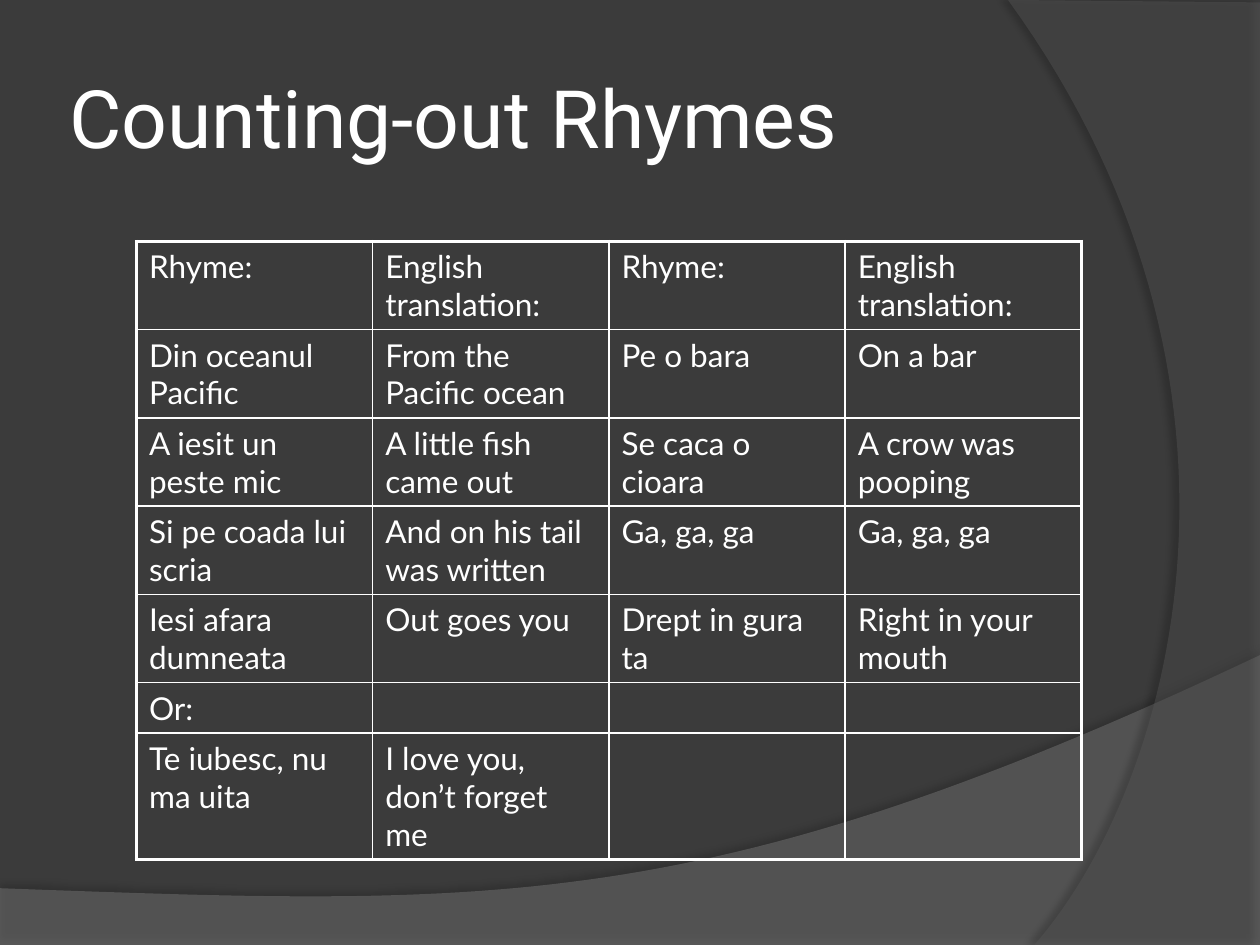
import lxml.etree
import pptx
import pptx.dml.color
import pptx.enum.text
import pptx.oxml.ns
import pptx.util

Pt = pptx.util.Pt
RGB = pptx.dml.color.RGBColor
WHITE = RGB(0xFF, 0xFF, 0xFF)
DARK = RGB(0x3B, 0x3B, 0x3B)
GREY = RGB(0x7C, 0x7C, 0x7C)
SLATE = RGB(0x59, 0x59, 0x59)
BLACK = RGB(0, 0, 0)

HEAD = {"name": "Roboto", "size": Pt(46)}
BODY = {"name": "Lato", "size": Pt(18)}
THICK, THIN = 2.25, 1
HEIGHTS = [50.4] * 5 + [28.8, 72]
RHYMES = [
    ["Rhyme:", "English translation:", "Rhyme:", "English translation:"],
    ["Din oceanul Pacific", "From the Pacific ocean", "Pe o bara", "On a bar"],
    ["A iesit un peste mic", "A little fish came out", "Se caca o cioara", "A crow was pooping"],
    ["Si pe coada lui scria", "And on his tail was written", "Ga, ga, ga", "Ga, ga, ga"],
    ["Iesi afara dumneata", "Out goes you", "Drept in gura ta", "Right in your mouth"],
    ["Or:", "", "", ""],
    ["Te iubesc, nu ma uita", "I love you, don’t forget me", "", ""],
]


def add(root, tag, **attrs):
    """Append a DrawingML child element and return it."""
    node = lxml.etree.SubElement(root, pptx.oxml.ns.qn("a:" + tag))
    for key, val in attrs.items():
        node.set(key, str(val))
    return node


def tint(root, color, alpha=100):
    """Append a colour with the given opacity in percent."""
    node = add(root, "srgbClr", val=color)
    add(node, "alpha", val=alpha * 1000)


def style(frame, text, form):
    """Write white text with the given font values."""
    para = frame.paragraphs[0]
    para.text = text
    for key, val in form.items():
        setattr(para.font, key, val)
    para.font.color.rgb = WHITE


def curve(ends, steps=60):
    """Return points along a cubic Bezier curve."""
    pts = []
    for step in range(1, steps + 1):
        t = step / steps
        mix = ((1 - t) ** 3, 3 * t * (1 - t) ** 2, 3 * t * t * (1 - t), t ** 3)
        pts.append(tuple(sum(m * end[axis] for m, end in zip(mix, ends)) for axis in (0, 1)))
    return pts


def sweep(slide, box, edge, ends, color, alpha, shade):
    """Draw a translucent band with straight edges and one curved side."""
    left, top = box
    pts = [(Pt(x), Pt(y)) for x, y in edge + curve([edge[-1]] + ends)]
    pen = slide.shapes.build_freeform(*pts[0], scale=1.0)
    pen.add_line_segments(pts[1:], close=True)
    band = pen.convert_to_shape(Pt(left), Pt(top))
    band.line.fill.background()
    band.fill.solid()
    band.fill.fore_color.rgb = color
    props = band.element.spPr
    fill = props.find(pptx.oxml.ns.qn("a:solidFill"))
    add(fill[0], "alpha", val=alpha * 1000)
    depth, dist, angle = shade
    glow = add(add(props, "effectLst"), "outerShdw", blurRad=Pt(4), dist=Pt(dist),
               dir=angle * 60000, algn="ctr", rotWithShape=0)
    tint(glow, BLACK, depth)


def title(slide, box, text):
    """Place the heading in the middle of its box."""
    frame = slide.shapes.add_textbox(*map(Pt, box)).text_frame
    form = {"word_wrap": True, "vertical_anchor": pptx.enum.text.MSO_ANCHOR.MIDDLE}
    form.update({"margin_" + side: Pt(3.6) for side in ("left", "top", "right", "bottom")})
    for key, val in form.items():
        setattr(frame, key, val)
    style(frame, text, HEAD)


def border(cell, sides):
    """Rule the four sides of a cell in white."""
    props = cell._tc.get_or_add_tcPr()
    for spot, (side, width) in enumerate(sides.items()):
        line = add(props, "ln" + side, w=Pt(width))
        tint(add(line, "solidFill"), WHITE)
        props.insert(spot, line)


def grid(slide, box, rows, heights):
    """Place the rhyme table with a thick frame and thin inner rules."""
    high, wide = len(rows), len(rows[0])
    table = slide.shapes.add_table(high, wide, *map(Pt, box)).table
    table.first_row = table.horz_banding = False
    for col in table.columns:
        col.width = Pt(box[2] / wide)
    for r, row in enumerate(rows):
        table.rows[r].height = Pt(heights[r])
        for c, text in enumerate(row):
            cell = table.cell(r, c)
            cell.fill.background()
            style(cell.text_frame, text, BODY)
            outer = {"L": c == 0, "R": c == wide - 1, "T": r == 0, "B": r == high - 1}
            border(cell, {side: THICK if out else THIN for side, out in outer.items()})


def main():
    """Build and save the slide."""
    deck = pptx.Presentation()
    deck.slide_width, deck.slide_height = Pt(720), Pt(540)
    slide = deck.slides.add_slide(deck.slide_layouts[6])
    slide.background.fill.solid()
    slide.background.fill.fore_color.rgb = DARK
    sweep(slide, (0, 374.4), [(0, 133.2), (0, 165.6), (720, 165.6), (720, 0)],
          [(402.5, 150.5), (281.5, 143.3), (0, 133.2)], GREY, 45, (35, 3.5, 270))
    sweep(slide, (576, 0), [(144, 1.4), (144, 540), (15.1, 540)],
          [(97.2, 445.7), (157, 216), (0, 0)], SLATE, 40, (45, 4, 180))
    title(slide, (36, 21.6, 588, 90), "Counting-out Rhymes")
    grid(slide, (78, 138, 540, 352.8), RHYMES, HEIGHTS)
    deck.save("out.pptx")


if __name__ == "__main__":
    main()
